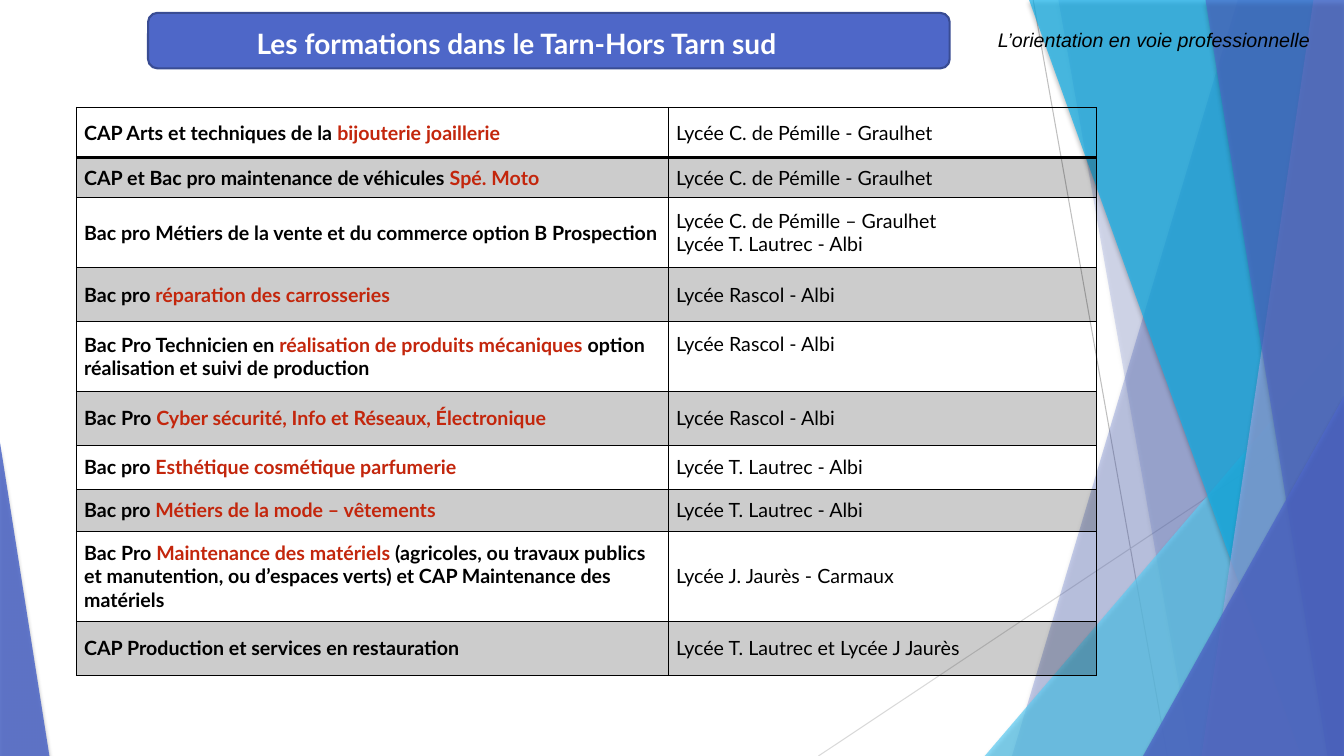
import pptx
import pptx.util
import pptx.dml.color
import pptx.enum.shapes
import pptx.enum.text
import pptx.oxml
import pptx.oxml.ns

Pt = pptx.util.Pt
RGBColor = pptx.dml.color.RGBColor
SHAPES = pptx.enum.shapes.MSO_SHAPE
ANCHOR = pptx.enum.text.MSO_ANCHOR
ALIGN = pptx.enum.text.PP_ALIGN
qn = pptx.oxml.ns.qn
NAMESPACE = 'xmlns:a="http://schemas.openxmlformats.org/drawingml/2006/main"'

BLACK = RGBColor(0x00, 0x00, 0x00)
WHITE = RGBColor(0xFF, 0xFF, 0xFF)
RED = RGBColor(0xC3, 0x26, 0x0C)
BLUE = RGBColor(0x4E, 0x67, 0xC8)
DARK_BLUE = RGBColor(0x39, 0x4C, 0x93)
PALE_BLUE = RGBColor(0x95, 0xA4, 0xDE)
CYAN = RGBColor(0x12, 0xB2, 0xEB)
LIGHT_CYAN = RGBColor(0x5E, 0xCC, 0xF3)
GREY = RGBColor(0xBF, 0xBF, 0xBF)
LIGHT_GREY = RGBColor(0xD9, 0xD9, 0xD9)

WIDTH, HEIGHT = 960, 540
TITLE = "Les formations dans le Tarn-Hors Tarn sud"
HEADING = "L’orientation en voie professionnelle"

THIN_LINES = [
    ((738, 0), (833.8, HEIGHT), GREY),
    ((WIDTH, 290.2), (584.6, HEIGHT), LIGHT_GREY),
]
# kind, geometry, colour, opacity
DECORATION = [
    ("panel", (884.2, 722.9), BLUE, 30),
    ("panel", (756, 851), BLUE, 20),
    ("triangle", (703.4, 240, 256.6, 1), LIGHT_CYAN, 72),
    ("panel", (735.1, 929.5), CYAN, 70),
    ("panel", (938.2, 858.2), PALE_BLUE, 70),
    ("panel", (861.1, 948.2), BLUE, 65),
    ("triangle", (816.5, 283, 143.5, 1), BLUE, 80),
    ("triangle", (0, 316.1, 35.3, 0), BLUE, 85),
]

TABLE_LEFT, TABLE_TOP = 54.7, 76.7
COLUMN_WIDTHS = [422.8, 306]
SIDE_MARGIN, END_MARGIN, RAISED_MARGIN = 5.4, 3.6, 8
RAISED_ROW = 4
# row height, (text, highlighted text, text), schools
COURSES = [
    (35.8, ("CAP Arts et techniques de la ", "bijouterie joaillerie"), ["Lycée C. de Pémille - Graulhet"]),
    (28.6, ("CAP et Bac pro maintenance de véhicules ", "Spé. Moto"), ["Lycée C. de Pémille - Graulhet"]),
    (50, ("Bac pro Métiers de la vente et du commerce option B Prospection",),
     ["Lycée C. de Pémille – Graulhet", "Lycée T. Lautrec - Albi"]),
    (38.6, ("Bac pro ", "réparation des carrosseries"), ["Lycée Rascol - Albi"]),
    (50, ("Bac Pro Technicien en ", "réalisation de produits mécaniques",
          " option réalisation et suivi de production"), ["Lycée Rascol - Albi"]),
    (38.6, ("Bac Pro ", "Cyber sécurité, Info et Réseaux, Électronique"), ["Lycée Rascol - Albi"]),
    (31.4, ("Bac pro ", "Esthétique cosmétique parfumerie"), ["Lycée T. Lautrec - Albi"]),
    (30, ("Bac pro ", "Métiers de la mode – vêtements"), ["Lycée T. Lautrec - Albi"]),
    (64.2, ("Bac Pro ", "Maintenance des matériels ",
            "(agricoles, ou travaux publics et manutention, ou d’espaces verts) et CAP Maintenance des matériels"),
     ["Lycée J. Jaurès - Carmaux"]),
    (38.6, ("CAP Production et services en restauration",), ["Lycée T. Lautrec et Lycée J Jaurès"]),
]


def set_fill(fill, properties, color, opacity):
    fill.solid()
    fill.fore_color.rgb = color
    color_element = properties.find(qn("a:solidFill")).find(qn("a:srgbClr"))
    color_element.append(pptx.oxml.parse_xml(f'<a:alpha {NAMESPACE} val="{opacity * 1000}"/>'))


def add_soft_shadow(shape):
    shape.shadow.inherit = False
    shape._element.spPr.find(qn("a:effectLst")).append(pptx.oxml.parse_xml(
        f'<a:outerShdw {NAMESPACE} blurRad="{Pt(3)}" dist="{Pt(2)}" dir="5400000" rotWithShape="0">'
        '<a:srgbClr val="000000"><a:alpha val="35000"/></a:srgbClr></a:outerShdw>'))


def format_run(run, font_name, size, color, bold=False, italic=False):
    font = run.font
    font.name, font.size, font.bold, font.italic = font_name, Pt(size), bold, italic
    font.color.rgb = color


def add_label(slide, box, text, alignment, *style):
    frame = slide.shapes.add_textbox(*map(Pt, box)).text_frame
    frame.word_wrap = True
    frame.text = text
    frame.paragraphs[0].alignment = alignment
    format_run(frame.paragraphs[0].runs[0], *style)


def add_decoration(slide):
    for start, end, color in THIN_LINES:
        line = slide.shapes.add_connector(pptx.enum.shapes.MSO_CONNECTOR.STRAIGHT, *map(Pt, start + end))
        line.line.color.rgb = color
        line.line.width = Pt(0.75)
        line._element.spPr.append(pptx.oxml.parse_xml(f"<a:effectLst {NAMESPACE}/>"))
    for kind, geometry, color, opacity in DECORATION:
        if kind == "panel":
            top_x, bottom_x = geometry
            builder = slide.shapes.build_freeform(Pt(top_x), Pt(0))
            corners = [(WIDTH, 0), (WIDTH, HEIGHT), (bottom_x, HEIGHT)]
            builder.add_line_segments([(Pt(x), Pt(y)) for x, y in corners], close=True)
            shape = builder.convert_to_shape()
        else:
            left, top, width, apex = geometry
            shape = slide.shapes.add_shape(
                SHAPES.ISOSCELES_TRIANGLE, Pt(left), Pt(top), Pt(width), Pt(HEIGHT - top))
            shape.adjustments[0] = apex
        set_fill(shape.fill, shape._element.spPr, color, opacity)
        shape.line.fill.background()
        add_soft_shadow(shape)


def add_title(slide):
    banner = slide.shapes.add_shape(SHAPES.ROUNDED_RECTANGLE, Pt(105.8), Pt(9.2), Pt(572.6), Pt(39.6))
    banner.fill.solid()
    banner.fill.fore_color.rgb = BLUE
    banner.line.color.rgb = DARK_BLUE
    banner.line.width = Pt(1.5)
    banner.shadow.inherit = False
    add_label(slide, (134, 15.1, 470, 39.6), TITLE, ALIGN.CENTER, "Lato", 20, WHITE, True)


def format_cell(cell, row):
    properties = cell._tc.get_or_add_tcPr()
    widths = {"L": 0.96, "R": 0.96, "T": 1.98 if row == 1 else 0.96, "B": 1.98 if row == 0 else 0.96}
    for side, width in widths.items():
        properties.append(pptx.oxml.parse_xml(
            f'<a:ln{side} {NAMESPACE} w="{Pt(width)}"><a:solidFill><a:srgbClr val="{BLACK}"/>'
            f'</a:solidFill></a:ln{side}>'))
    if row % 2:
        set_fill(cell.fill, properties, BLACK, 20)
    else:
        cell.fill.background()
    cell.margin_left = cell.margin_right = Pt(SIDE_MARGIN)
    cell.margin_top = cell.margin_bottom = Pt(END_MARGIN)
    cell.vertical_anchor = ANCHOR.MIDDLE


def add_course_table(slide):
    height = sum(course[0] for course in COURSES)
    table = slide.shapes.add_table(
        len(COURSES), len(COLUMN_WIDTHS), Pt(TABLE_LEFT), Pt(TABLE_TOP),
        Pt(sum(COLUMN_WIDTHS)), Pt(height)).table
    table.first_row = table.horz_banding = False
    for column, width in zip(table.columns, COLUMN_WIDTHS):
        column.width = Pt(width)
    for row, (row_height, course, schools) in enumerate(COURSES):
        table.rows[row].height = Pt(row_height)
        course_cell, school_cell = table.rows[row].cells
        format_cell(course_cell, row)
        format_cell(school_cell, row)
        for index, text in enumerate(course):
            run = course_cell.text_frame.paragraphs[0].add_run()
            run.text = text
            format_run(run, "Lato", 14, RED if index == 1 else BLACK, True)
        school_cell.text_frame.text = "\n".join(schools)
        for paragraph in school_cell.text_frame.paragraphs:
            format_run(paragraph.runs[0], "Lato", 14, BLACK)
        if row == RAISED_ROW:
            school_cell.vertical_anchor = ANCHOR.TOP
            school_cell.margin_top = Pt(RAISED_MARGIN)


def main():
    presentation = pptx.Presentation()
    presentation.slide_width, presentation.slide_height = Pt(WIDTH), Pt(HEIGHT)
    slide = presentation.slides.add_slide(presentation.slide_layouts[6])
    add_decoration(slide)
    add_title(slide)
    add_course_table(slide)
    add_label(slide, (705.6, 16.6, 239, 23.8), HEADING, ALIGN.LEFT, "Arial", 14, BLACK, False, True)
    presentation.save("out.pptx")


if __name__ == "__main__":
    main()
